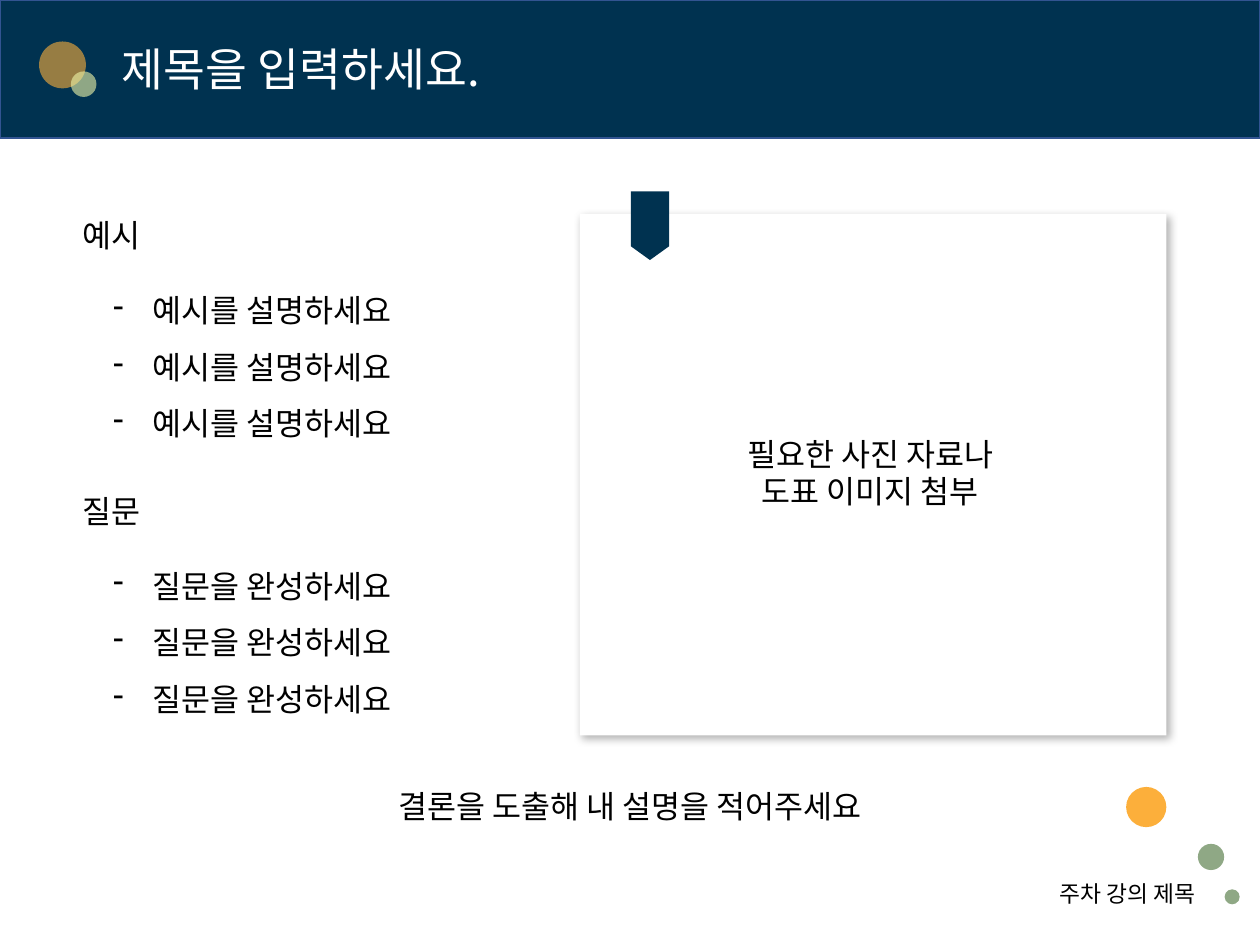
import pptx
import pptx.util
import pptx.dml.color
import pptx.enum.shapes
import pptx.enum.text
import pptx.oxml
import pptx.oxml.ns

Pt = pptx.util.Pt
Kind = pptx.enum.shapes.MSO_SHAPE
Align = pptx.enum.text.PP_ALIGN
Anchor = pptx.enum.text.MSO_ANCHOR
qn = pptx.oxml.ns.qn

COLORS = {
    "navy": "003250", "edge": "325491", "orange": "FCAF3B", "lime": "EFF6A9",
    "sage": "8FA885", "white": "FFFFFF", "black": "000000",
}
SHADOW = (
    '<a:effectLst xmlns:a="http://schemas.openxmlformats.org/drawingml/2006/main">'
    '<a:outerShdw blurRad="57150" dist="33020" dir="3180000" algn="tl" rotWithShape="0">'
    '<a:srgbClr val="000000"><a:alpha val="30000"/></a:srgbClr>'
    '</a:outerShdw></a:effectLst>'
)


def add(node, tag, **attrs):
    child = node.makeelement(qn(tag), attrs)
    node.append(child)
    return child


class Deck:
    font = "Noto Sans CJK KR"

    def __init__(self, width, height):
        self.file = pptx.Presentation()
        self.file.slide_width, self.file.slide_height = Pt(width), Pt(height)
        self.slide = self.file.slides.add_slide(self.file.slide_layouts[6])

    def color(self, name):
        return pptx.dml.color.RGBColor.from_string(COLORS[name])

    def shape(self, kind, box, fill, edge=None, alpha=None, group=None):
        home = group or self.slide
        shape = home.shapes.add_shape(kind, *map(Pt, box))
        shape.shadow.inherit = False
        shape.fill.solid()
        shape.fill.fore_color.rgb = self.color(fill)
        if alpha:
            tint = shape._element.spPr.find(qn("a:solidFill"))[0]
            add(tint, "a:alpha", val=str(alpha * 1000))
        if edge:
            shape.line.color.rgb = self.color(edge)
            shape.line.width = Pt(1)
        else:
            shape.line.fill.background()
        return shape

    def dot(self, left, top, size, fill, **more):
        return self.shape(Kind.OVAL, (left, top, size, size), fill, **more)

    def card(self, box):
        """White panel with a soft drop shadow."""
        props = self.shape(Kind.RECTANGLE, box, "white")._element.spPr
        props.remove(props.find(qn("a:effectLst")))
        props.append(pptx.oxml.parse_xml(SHADOW))

    def text(self, box, lines, size=18, color="black", align=Align.LEFT,
             anchor=Anchor.TOP, space=None, wrap=False, bullet=None):
        frame = self.slide.shapes.add_textbox(*map(Pt, box)).text_frame
        frame.word_wrap = wrap
        frame.vertical_anchor = anchor
        for i, line in enumerate(lines):
            para = frame.add_paragraph() if i else frame.paragraphs[0]
            para.alignment = align
            para.line_spacing = space
            if bullet:
                props = para._p.get_or_add_pPr()
                props.set("marL", str(Pt(22.5)))
                props.set("indent", str(-Pt(22.5)))
                add(props, "a:buFontTx")
                add(props, "a:buChar", char=bullet)
            run = para.add_run()
            run.text = line
            run.font.size = Pt(size)
            run.font.name = self.font
            run.font.color.rgb = self.color(color)
            add(run._r.get_or_add_rPr(), "a:ea", typeface=self.font)

    def topic(self, top, head, item):
        """Heading with three dashed items below it."""
        self.text((40.3, top, 47.5, 29), [head])
        self.text((57.6, top + 32, 177, 103), [item] * 3, space=1.5, bullet="-")


def main():
    deck = Deck(720, 540)
    deck.shape(Kind.RECTANGLE, (0, 0, 720, 79), "navy", edge="edge")
    group = deck.slide.shapes.add_group_shape()
    deck.dot(22.3, 23.7, 26.8, "orange", alpha=60, group=group)
    deck.dot(40.5, 40.8, 14.6, "lime", alpha=60, group=group)
    deck.text((62.6, 20.2, 411, 38.2), ["제목을 입력하세요."], size=26,
              color="white", anchor=Anchor.BOTTOM, space=0.9, wrap=True)

    for left, top, size, fill in (
        (643.5, 449.7, 23, "orange"),
        (684.5, 482.2, 15, "sage"),
        (699.8, 508.2, 8.6, "sage"),
    ):
        deck.dot(left, top, size, fill)

    deck.topic(120, "예시", "예시를 설명하세요")
    deck.topic(277.5, "질문", "질문을 완성하세요")

    deck.card((331.4, 122.2, 335.2, 298))
    deck.shape(Kind.FLOWCHART_OFFPAGE_CONNECTOR, (360.5, 109.4, 21.8, 39.2), "navy")
    deck.text((409, 244.8, 176.4, 51), ["필요한 사진 자료나", "도표 이미지 첨부"],
              align=Align.CENTER, wrap=True)
    deck.text((215.3, 446.4, 289.4, 29), ["결론을 도출해 내 설명을 적어주세요"],
              align=Align.CENTER)
    deck.text((596, 501, 96.5, 22.3), ["주차 강의 제목"], size=13,
              align=Align.CENTER, space=0.9, wrap=True)
    deck.file.save("out.pptx")


if __name__ == "__main__":
    main()
